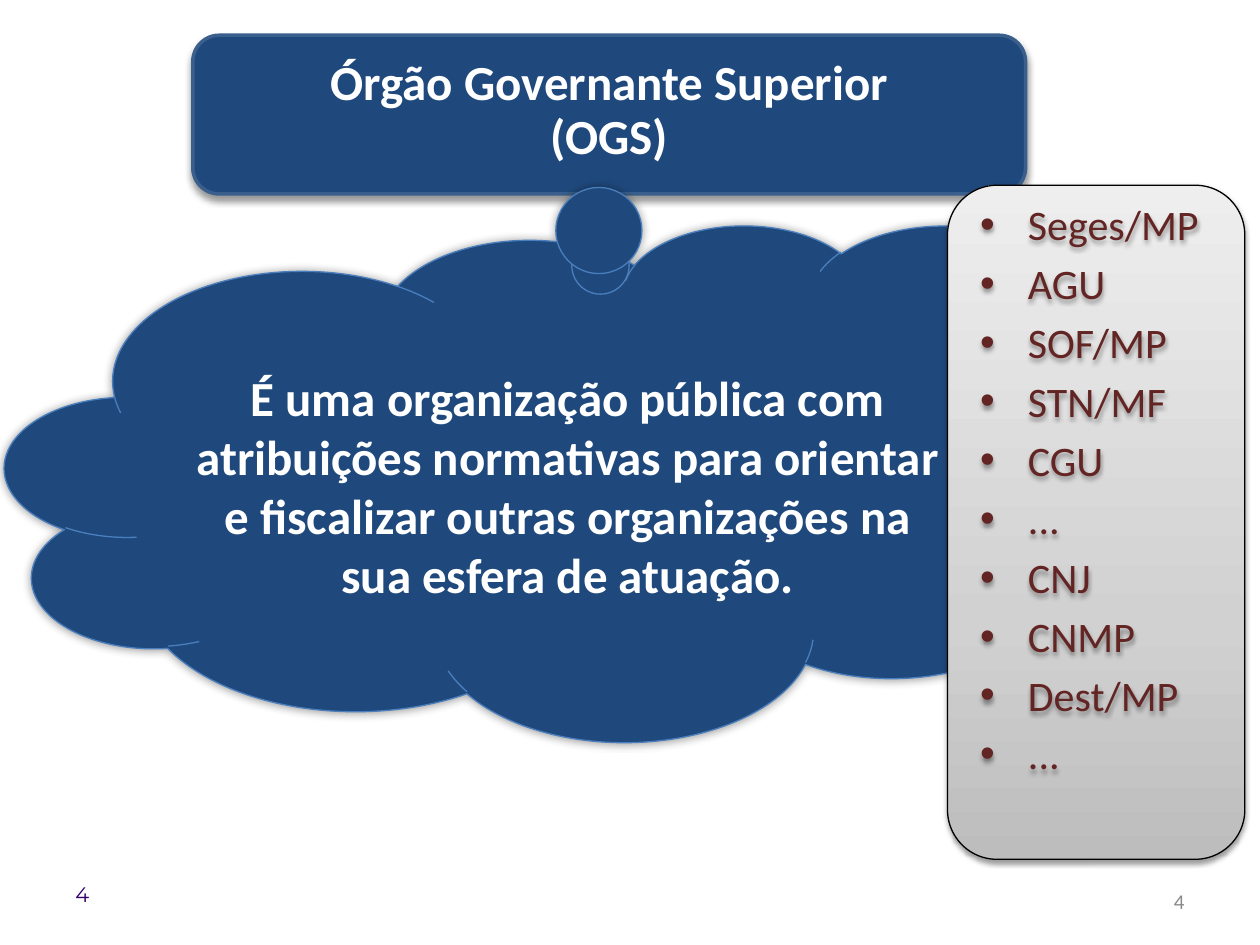
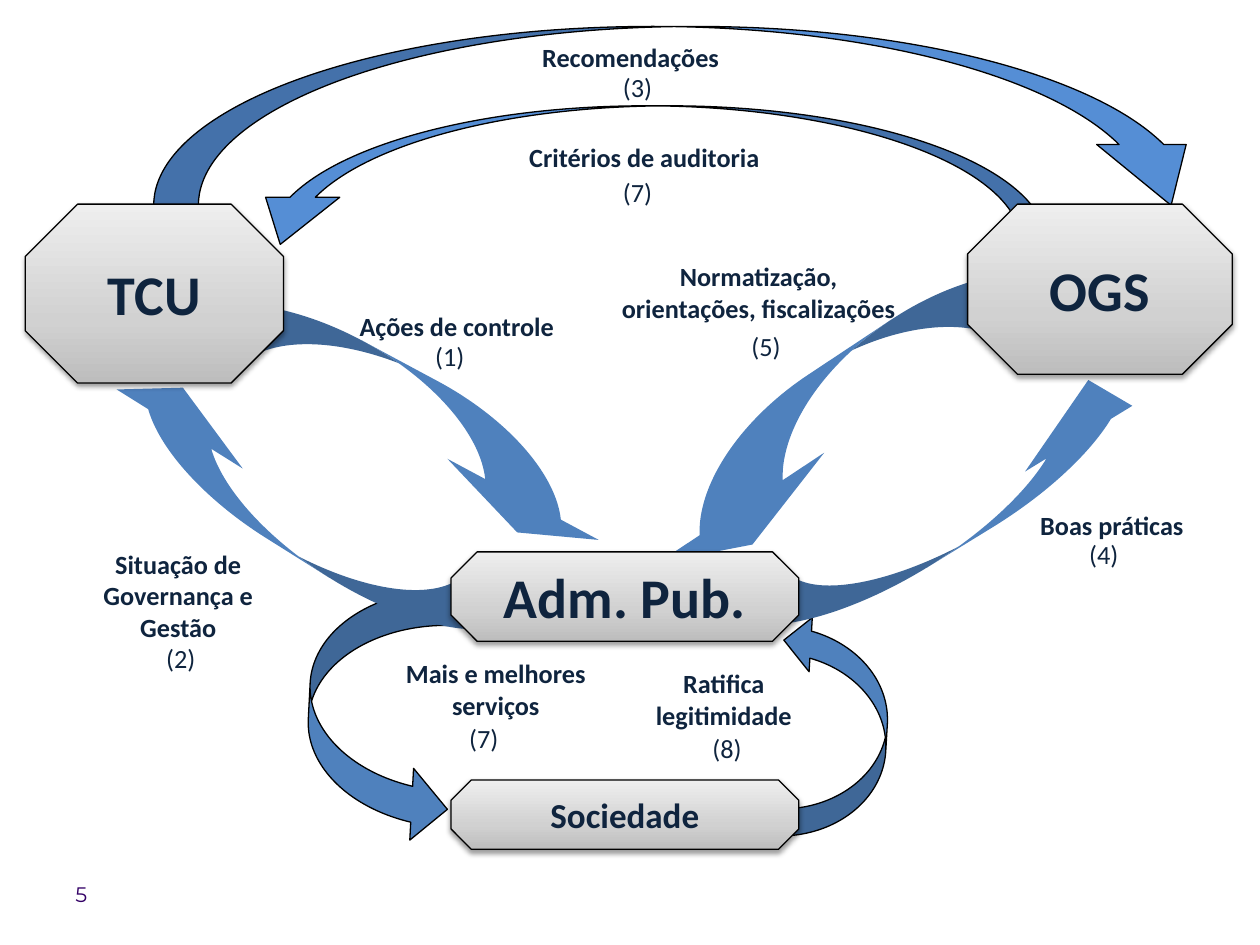
from lxml.etree import SubElement
from pptx import Presentation
from pptx.dml.color import RGBColor
from pptx.enum.shapes import MSO_SHAPE as Preset
from pptx.enum.text import MSO_ANCHOR as Anchor, PP_ALIGN as Align
from pptx.oxml.ns import qn
from pptx.util import Inches, Pt

WHITE = RGBColor(0xFF, 0xFF, 0xFF)
BLACK = RGBColor(0x00, 0x00, 0x00)
NAVY = RGBColor(0x1F, 0x49, 0x7D)
TITLE_EDGE = RGBColor(0x3A, 0x5F, 0x8C)
CLOUD_EDGE = RGBColor(0x4B, 0x7E, 0xBC)
BLUE = RGBColor(0x4F, 0x81, 0xBD)
BRIGHT_BLUE = RGBColor(0x55, 0x8E, 0xD5)
INK = RGBColor(0x0F, 0x24, 0x3E)
MAROON = RGBColor(0x63, 0x25, 0x23)
GRAY = RGBColor(0x89, 0x89, 0x89)
PURPLE = RGBColor(0x33, 0x00, 0x66)
SILVER = ((0, "BDBDBD"), (35, "D1D1D1"), (100, "EEEEEE"))
SOFT_SHADOW = (38, 3.1, 1.6, 90)

presentation = Presentation()
presentation.slide_width = Inches(10)
presentation.slide_height = Inches(7.5)
COLUMN = presentation.slide_width / 100
ROW = presentation.slide_height / 75


def add_block(slide, preset, frame, fill=None, line=None, line_width=0.75, shadow=None):
    left, top, width, height = frame
    box = [int(left * COLUMN), int(top * ROW), int(width * COLUMN), int(height * ROW)]
    if preset is None:
        shape = slide.shapes.add_textbox(*box)
    else:
        shape = slide.shapes.add_shape(preset, *box)
    if fill is None:
        shape.fill.background()
    elif isinstance(fill, RGBColor):
        shape.fill.solid()
        shape.fill.fore_color.rgb = fill
    else:
        shape.fill.gradient()
        shape.fill.gradient_angle = 90
        stops = shape._element.spPr.find(qn("a:gradFill")).find(qn("a:gsLst"))
        for stop in list(stops):
            stops.remove(stop)
        for position, color in fill:
            stop = SubElement(stops, qn("a:gs"), pos=str(position * 1000))
            SubElement(stop, qn("a:srgbClr"), val=color)
    if line is None:
        shape.line.fill.background()
    else:
        shape.line.color.rgb = line
        shape.line.width = Pt(line_width)
    shape.shadow.inherit = False
    if shadow:
        opacity, blur, distance, angle = shadow
        effects = shape._element.spPr.find(qn("a:effectLst"))
        outer = SubElement(effects, qn("a:outerShdw"), blurRad=str(Pt(blur)), dist=str(Pt(distance)),
                           dir=str(angle * 60000), algn="ctr", rotWithShape="0")
        color = SubElement(outer, qn("a:srgbClr"), val="000000")
        SubElement(color, qn("a:alpha"), val=str(opacity * 1000))
    return shape


def write(shape, text, size, color, bold=False, align=Align.CENTER, anchor=Anchor.MIDDLE,
          font="Calibri", before=0, spacing=None, bullet=None):
    text_frame = shape.text_frame
    text_frame.word_wrap = True
    text_frame.vertical_anchor = anchor
    text_frame.text = text
    for index, paragraph in enumerate(text_frame.paragraphs):
        if index and before:
            paragraph.space_before = Pt(before)
        if spacing:
            paragraph.line_spacing = spacing
        if bullet:
            properties = paragraph._p.get_or_add_pPr()
            properties.set("marL", str(Inches(0.38)))
            properties.set("indent", str(-Inches(0.38)))
            SubElement(properties, qn("a:buFont"), typeface="Arial")
            SubElement(properties, qn("a:buChar"), char=bullet)
        paragraph.alignment = align
        paragraph.font.name = font
        paragraph.font.size = Pt(size)
        paragraph.font.bold = bold
        paragraph.font.color.rgb = color


blank = presentation.slide_layouts[6]
definition_slide = presentation.slides.add_slide(blank)
cycle_slide = presentation.slides.add_slide(blank)

title = add_block(definition_slide, Preset.ROUNDED_RECTANGLE, (15.3, 2.8, 66.1, 12.6),
                  NAVY, TITLE_EDGE, 2, (40, 4, 3, 90))
write(title, "Órgão Governante Superior\n(OGS)", 28, WHITE, True, before=5.6, spacing=0.75)

cloud = add_block(definition_slide, Preset.CLOUD_CALLOUT, (0.4, 17.8, 96.1, 41),
                  NAVY, CLOUD_EDGE, shadow=(40, 5, 0, 0))
cloud.adjustments[0] = -0.008
cloud.adjustments[1] = -0.408
cloud.text_frame.margin_top = Inches(0.52)
write(cloud, "É uma organização pública com atribuições normativas para orientar "
      "e fiscalizar outras organizações na sua esfera de atuação.", 28, WHITE, True, anchor=Anchor.TOP)

add_block(definition_slide, Preset.ROUNDED_RECTANGLE, (75.2, 14.7, 23.6, 53.5),
          SILVER, BLACK, shadow=SOFT_SHADOW)
agencies = ["Seges/MP", "AGU", "SOF/MP", "STN/MF", "CGU", "...", "CNJ", "CNMP", "Dest/MP", "..."]
agency_list = add_block(definition_slide, None, (76.8, 15.3, 23.2, 53.6), shadow=SOFT_SHADOW)
write(agency_list, "\n".join(agencies), 24, MAROON, align=Align.LEFT, anchor=Anchor.TOP,
      before=4.8, bullet="•")

corner_number = add_block(definition_slide, None, (71.7, 69.5, 23.3, 4))
write(corner_number, "4", 12, GRAY, align=Align.RIGHT)

RIGHT, DOWN = Preset.CURVED_RIGHT_ARROW, Preset.CURVED_DOWN_ARROW
low_arrows = [
    (RIGHT, (24.5, 46.5, 11.4, 20.3), 3, False, (0.25, 0.5, 0.25), BLUE, BLACK),
    (RIGHT, (61.8, 48.9, 8.6, 17.7), 183.4, False, (0.25, 0.5, 0.25), BLUE, BLACK),
    (DOWN, (11.7, 29, 39.5, 7.6), 28.2, False, (0.896, 1.793, 0.333), BLUE, None),
    (DOWN, (4.8, 37.4, 38.7, 6.6), 212.1, False, (0.895, 1.79, 0.441), BLUE, None),
    (DOWN, (47.2, 27.9, 42.1, 8.8), 326.5, True, (0.899, 1.798, 0.333), BLUE, None),
    (DOWN, (55.7, 37.4, 39.4, 6), 148.5, True, (1.791, 1.664, 0.595), BLUE, None),
]
top_arrows = [
    (DOWN, (19.3, 8.4, 63.8, 11), 0, True, (0.183, 0.535, 0.34), BRIGHT_BLUE, BLACK),
    (DOWN, (12.2, 2.1, 84.3, 14.2), 0, False, (0.25, 0.5, 0.34), BRIGHT_BLUE, BLACK),
]
actors = [
    ("Sociedade", (35.8, 61.9, 27.6, 5.5), 20),
    ("Adm. Pub.", (35.8, 43.8, 27.6, 7.1), 32),
    ("OGS", (76.8, 16.2, 21, 13.5), 32),
    ("TCU", (2, 16.2, 20.5, 14.2), 32),
]
for preset, frame, rotation, flipped, adjustments, fill, line in low_arrows + top_arrows:
    arrow = add_block(cycle_slide, preset, frame, fill, line)
    arrow.rotation = rotation
    for index, value in enumerate(adjustments):
        arrow.adjustments[index] = value
    if flipped:
        arrow._element.spPr.find(qn("a:xfrm")).set("flipH", "1")

for name, frame, size in actors:
    actor = add_block(cycle_slide, Preset.OCTAGON, frame, SILVER, BLACK, shadow=SOFT_SHADOW)
    write(actor, name, size, INK, True)

NUMBER_WIDTH, NUMBER_HEIGHT = 5, 3.5
flows = [
    ("Ações de controle", (26.4, 24.1, 19.7, 3.5), "(1)", 35.7, 26.5),
    ("Situação de Governança e Gestão", (4.3, 43, 19.7, 8.6), "(2)", 14.35, 50.5),
    ("Recomendações", (32.7, 2.8, 34.7, 3.5), "(3)", 50.6, 5.2),
    ("Boas práticas", (78.4, 39.9, 19.7, 3.5), "(4)", 87.6, 42.2),
    ("Normatização, orientações, fiscalizações", (47.6, 20.2, 25.2, 6.1), "(5)", 60.8, 25.7),
    ("Critérios de auditoria", (35, 10.7, 32.3, 3.5), "(7)", 50.6, 13.5),
    ("Mais e melhores serviços", (29.5, 51.7, 19.7, 6.1), "(7)", 38.4, 56.8),
    ("Ratifica\nlegitimidade", (47.6, 52.5, 19.7, 6.1), "(8)", 57.7, 57.6),
]
for label, frame, number, center, top in flows:
    write(add_block(cycle_slide, None, frame), label, 15, INK, True, anchor=Anchor.TOP)
    number_box = add_block(cycle_slide, None,
                           (center - NUMBER_WIDTH / 2, top, NUMBER_WIDTH, NUMBER_HEIGHT))
    write(number_box, number, 15, INK, anchor=Anchor.TOP)

for slide, number in ((definition_slide, "4"), (cycle_slide, "5")):
    page_number = add_block(slide, None, (5, 69, 23.3, 4))
    write(page_number, number, 12, PURPLE, align=Align.LEFT, font="Montserrat")

presentation.save("out.pptx")
